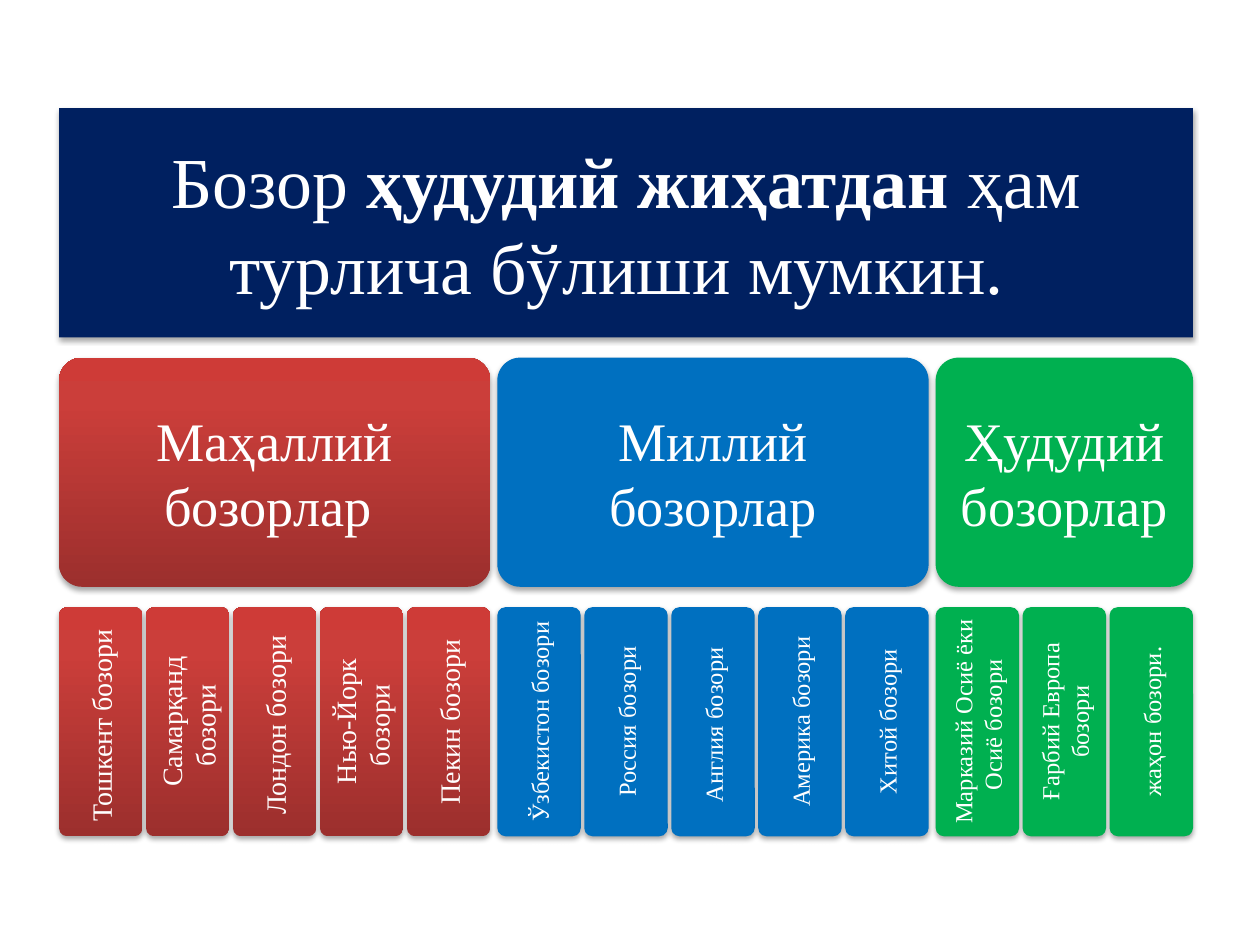
from copy import deepcopy
from dataclasses import dataclass

from lxml import etree
from pptx import Presentation
from pptx.dml.color import RGBColor
from pptx.enum.shapes import MSO_SHAPE
from pptx.enum.text import MSO_ANCHOR, MSO_AUTO_SIZE, PP_ALIGN
from pptx.oxml import parse_xml
from pptx.oxml.ns import qn
from pptx.util import Cm, Pt

ROUND = MSO_SHAPE.ROUNDED_RECTANGLE
MIDDLE = MSO_ANCHOR.MIDDLE
FIXED = MSO_AUTO_SIZE.NONE
CENTER = PP_ALIGN.CENTER

SPACE = 'xmlns:a="http://schemas.openxmlformats.org/drawingml/2006/main"'
HEX = {
    "navy": "002060", "blue": "0070C0", "green": "00B050", "white": "FFFFFF",
    "dark": "9C2F2D", "mid": "CB3E3A", "light": "CE3B37",
}
STOPS = {"red": [(0, "dark"), (0.8, "mid"), (1, "light")]}

LEFT, TOP, WIDTH = 1.19, 2.18, 22.86
HIGH, STEP = 4.62, 5.03
GAP = 0.07


@dataclass
class Group:
    head: str
    color: str
    size: int
    inset: float
    leaves: list[str]


@dataclass
class Style:
    color: str
    size: int
    inset: float
    turned: bool = False


GROUPS = [
    Group("Маҳаллий бозорлар ", "red", 16, 0.18, [
        "Тошкент бозори ", "Самарқанд бозори ", "Лондон бозори ",
        "Нью-Йорк бозори ", "Пекин бозори"]),
    Group("Миллий бозорлар", "blue", 14, 0.15, [
        "Ўзбекистон бозори", " Россия бозори ", "Англия бозори ",
        "Америка бозори", "Хитой бозори"]),
    Group("Ҳудудий бозорлар", "green", 14, 0.15, [
        "Марказий Осиё ёки Осиё бозори ", "Ғарбий Европа бозори",
        "жаҳон бозори."]),
]
TITLE = [("Бозор ", False), ("ҳудудий жиҳатдан", True),
         (" ҳам турлича бўлиши мумкин. ", False)]


def rgb(name: str) -> RGBColor:
    return RGBColor.from_string(HEX[name])


def paint(shape, color: str) -> None:
    fill = shape.fill
    if color in STOPS:
        fill.gradient()
        fill.gradient_angle = 90
        first = shape.element.spPr.find(".//" + qn("a:gs"))
        first.addnext(deepcopy(first))
        for stop, (place, name) in zip(fill.gradient_stops, STOPS[color]):
            stop.position = place
            stop.color.rgb = rgb(name)
    else:
        fill.solid()
        fill.fore_color.rgb = rgb(color)


def shade(shape) -> None:
    shape.shadow.inherit = False
    effects = shape.element.spPr.find(qn("a:effectLst"))
    effects.append(parse_xml(
        f'<a:outerShdw {SPACE} blurRad="40000" dist="23000" dir="5400000" '
        'rotWithShape="0"><a:srgbClr val="000000"><a:alpha val="35000"/>'
        '</a:srgbClr></a:outerShdw>'))


def write(shape, runs: list[tuple[str, bool]], style: Style) -> None:
    frame = shape.text_frame
    inset = Cm(style.inset)
    look = {"word_wrap": True, "auto_size": FIXED, "vertical_anchor": MIDDLE,
            "margin_left": inset, "margin_right": inset,
            "margin_top": inset, "margin_bottom": inset}
    for key, value in look.items():
        setattr(frame, key, value)
    if style.turned:
        shape.element.txBody.find(qn("a:bodyPr")).set("vert", "vert270")
    line = frame.paragraphs[0]
    line.alignment = CENTER
    after = etree.SubElement(line._p.get_or_add_pPr(), qn("a:spcAft"))
    etree.SubElement(after, qn("a:spcPct")).set("val", "35000")
    for text, bold in runs:
        run = line.add_run()
        run.text = text
        for key, value in {"name": "Times New Roman", "size": Pt(style.size),
                           "bold": bold}.items():
            setattr(run.font, key, value)
        run.font.color.rgb = rgb("white")


def dress(shape, runs: list[tuple[str, bool]], style: Style) -> None:
    paint(shape, style.color)
    shape.line.fill.background()
    shade(shape)
    write(shape, runs, style)


def card(slide, left: float, row: int, width: float, text: str,
         style: Style) -> None:
    shape = slide.shapes.add_shape(
        ROUND, Cm(left), Cm(TOP + row * STEP), Cm(width), Cm(HIGH))
    shape.adjustments[0] = 0.1
    dress(shape, [(text, False)], style)


def banner(slide) -> None:
    title = slide.shapes.title
    for key, value in {"left": LEFT, "top": TOP, "width": WIDTH,
                       "height": HIGH}.items():
        setattr(title, key, Cm(value))
    title.element.spPr.append(parse_xml(
        f'<a:prstGeom {SPACE} prst="roundRect"><a:avLst>'
        '<a:gd name="adj" fmla="val 10000"/></a:avLst></a:prstGeom>'))
    dress(title, TITLE, Style("navy", 41, 0.43))


def main() -> None:
    deck = Presentation()
    deck.slide_width, deck.slide_height = Cm(25.4), Cm(19.05)
    slide = deck.slides.add_slide(deck.slide_layouts[5])
    banner(slide)

    count = sum(len(group.leaves) for group in GROUPS)
    gaps = count - 1 + len(GROUPS) - 1
    wide = (WIDTH - gaps * GAP) / count
    left = LEFT
    for group in GROUPS:
        span = len(group.leaves) * (wide + GAP) - GAP
        card(slide, left, 1, span, group.head, Style(group.color, 31, 0.33))
        style = Style(group.color, group.size, group.inset, True)
        for spot, leaf in enumerate(group.leaves):
            card(slide, left + spot * (wide + GAP), 2, wide, leaf, style)
        left += span + 2 * GAP

    deck.save("out.pptx")


if __name__ == "__main__":
    main()
